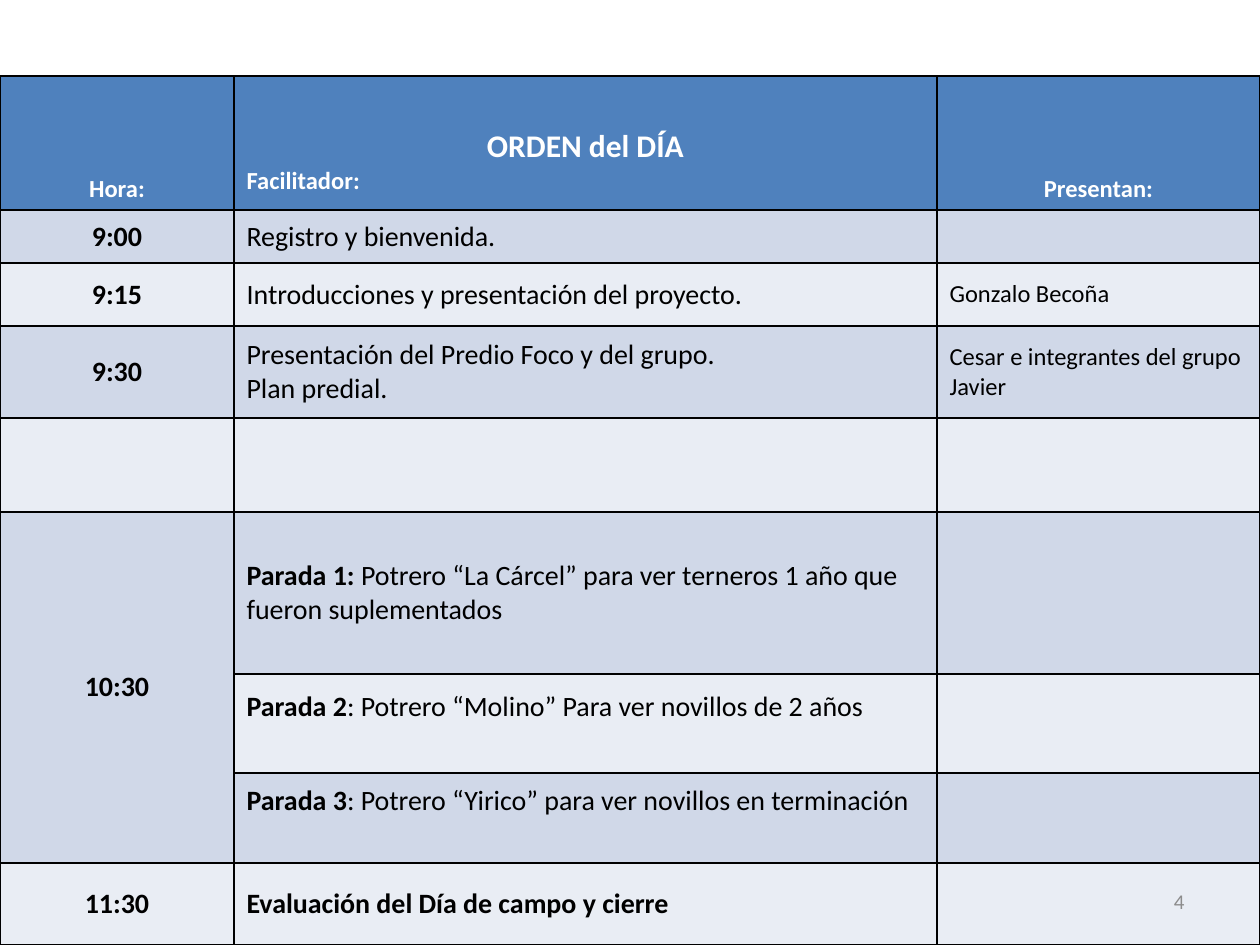
from lxml import etree
from pptx import Presentation
from pptx.dml.color import RGBColor
from pptx.enum.text import MSO_ANCHOR, PP_ALIGN
from pptx.oxml.ns import qn
from pptx.util import Pt

EMU_PER_PX = 914400 / 126
LEFT, CENTER, RIGHT = PP_ALIGN.LEFT, PP_ALIGN.CENTER, PP_ALIGN.RIGHT
MIDDLE, BOTTOM = MSO_ANCHOR.MIDDLE, MSO_ANCHOR.BOTTOM

WHITE = RGBColor(0xFF, 0xFF, 0xFF)
BLACK = RGBColor(0x00, 0x00, 0x00)
GRAY = RGBColor(0x8C, 0x8C, 0x8C)
HEADER_BLUE = RGBColor(0x4F, 0x81, 0xBD)
BANDS = (RGBColor(0xD0, 0xD8, 0xE8), RGBColor(0xE9, 0xED, 0xF4))

COLUMN_WIDTHS = (234, 703, 323)
ROW_HEIGHTS = (134, 53, 63, 92, 94, 162, 99, 90, 82)
TABLE_TOP = 76
STOPS_FIRST, STOPS_LAST = 5, 7  # rows that share the 10:30 time

# Each activity is a list of lines; each line is a list of (text, bold) runs
AGENDA = (
    ("9:00", [[("Registro y bienvenida.", False)]], []),
    ("9:15", [[("Introducciones y presentación del proyecto.", False)]],
     ["Gonzalo Becoña"]),
    ("9:30", [[("Presentación del Predio Foco y del grupo.", False)],
              [("Plan predial.", False)]],
     ["Cesar e integrantes del grupo", "Javier"]),
    ("", [], []),
    ("10:30", [[("Parada 1: ", True),
                ("Potrero “La Cárcel” para ver terneros 1 año que "
                 "fueron suplementados", False)]], []),
    ("", [[("Parada 2", True),
           (": Potrero “Molino” Para ver novillos de 2 años", False)]], []),
    ("", [[("Parada 3", True),
           (": Potrero “Yirico” para ver novillos en terminación", False)]], []),
    ("11:30", [[("Evaluación del Día de campo y cierre", True)]], []),
)


def px(length):
    return round(length * EMU_PER_PX)


def write(paragraph, text, size=16, bold=False, color=BLACK, align=LEFT):
    """Add one formatted run to a paragraph."""
    paragraph.alignment = align
    run = paragraph.add_run()
    run.text = text
    run.font.name = "Calibri"
    run.font.size = Pt(size)
    run.font.bold = bold
    run.font.color.rgb = color


def next_paragraph(frame):
    first = frame.paragraphs[0]
    return frame.add_paragraph() if first.runs else first


def style_cell(cell, fill, anchor=MIDDLE):
    """Give a cell black borders, a fill and a vertical anchor."""
    properties = cell._tc.get_or_add_tcPr()
    for side in ("a:lnL", "a:lnR", "a:lnT", "a:lnB"):
        border = etree.SubElement(properties, qn(side), w=str(Pt(1)))
        solid = etree.SubElement(border, qn("a:solidFill"))
        etree.SubElement(solid, qn("a:srgbClr"), val=str(BLACK))
    cell.fill.solid()
    cell.fill.fore_color.rgb = fill
    cell.vertical_anchor = anchor


def add_agenda_table(slide):
    table = slide.shapes.add_table(
        len(ROW_HEIGHTS), len(COLUMN_WIDTHS), 0, px(TABLE_TOP),
        px(sum(COLUMN_WIDTHS)), px(sum(ROW_HEIGHTS))).table
    table.horz_banding = False
    for column, width in zip(table.columns, COLUMN_WIDTHS):
        column.width = px(width)
    for row, height in zip(table.rows, ROW_HEIGHTS):
        row.height = px(height)
    return table


def fill_header(table):
    hour, agenda, presenters = (table.cell(0, i) for i in range(3))
    for cell, anchor in ((hour, BOTTOM), (agenda, MIDDLE), (presenters, BOTTOM)):
        style_cell(cell, HEADER_BLUE, anchor)
    header = {"bold": True, "color": WHITE}
    for cell, label in ((hour, "Hora:"), (presenters, "Presentan:")):
        write(next_paragraph(cell.text_frame), label, size=14, align=CENTER, **header)
    agenda.margin_top = px(44)
    frame = agenda.text_frame
    write(next_paragraph(frame), "ORDEN del DÍA", size=18, align=CENTER, **header)
    write(next_paragraph(frame), "Facilitador:", size=14, **header)


def fill_row(table, index, time, activity, presenters):
    cells = [table.cell(index, i) for i in range(3)]
    for cell in cells:
        style_cell(cell, BANDS[(index - 1) % 2])
    if time:
        write(next_paragraph(cells[0].text_frame), time, bold=True, align=CENTER)
    for line in activity:
        paragraph = next_paragraph(cells[1].text_frame)
        for text, bold in line:
            write(paragraph, text, bold=bold)
    for name in presenters:
        write(next_paragraph(cells[2].text_frame), name, size=14)


def add_page_number(slide, number):
    box = slide.shapes.add_textbox(px(903), px(876), px(294), px(50))
    frame = box.text_frame
    frame.word_wrap = True
    frame.vertical_anchor = MIDDLE
    write(next_paragraph(frame), number, size=12, color=GRAY, align=RIGHT)


def main():
    prs = Presentation()
    prs.slide_width, prs.slide_height = px(1260), px(945)
    slide = prs.slides.add_slide(prs.slide_layouts[6])

    # Agenda
    table = add_agenda_table(slide)
    fill_header(table)
    for index, (time, activity, presenters) in enumerate(AGENDA, start=1):
        fill_row(table, index, time, activity, presenters)

    # Field stops under one time; the last two sit above the middle
    table.cell(STOPS_FIRST, 0).merge(table.cell(STOPS_LAST, 0))
    for index in range(STOPS_FIRST + 1, STOPS_LAST + 1):
        table.cell(index, 1).margin_bottom = px(40)

    add_page_number(slide, "4")
    prs.save("out.pptx")


if __name__ == "__main__":
    main()
